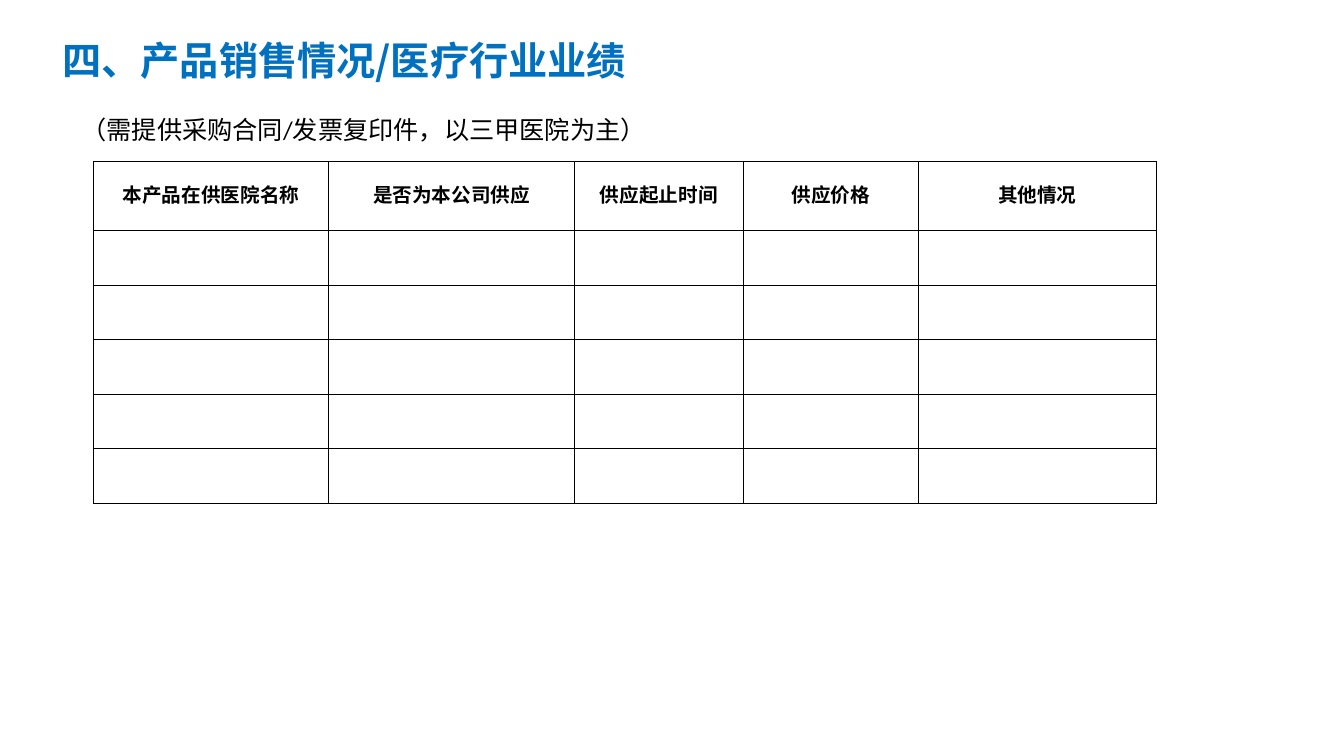
from lxml.etree import SubElement
from pptx import Presentation
from pptx.dml.color import RGBColor
from pptx.enum.text import MSO_ANCHOR, PP_ALIGN
from pptx.oxml.ns import qn
from pptx.util import Inches, Pt

COLORS = {"title": "0070C0", "text": "000000", "border": "000000"}
CJK_FONT = "Noto Sans CJK SC"


def add_run(paragraph, text, size, color, latin=CJK_FONT, bold=False):
    run = paragraph.add_run()
    run.text = text
    run.font.size = Pt(size)
    run.font.bold = bold
    run.font.name = latin
    run.font.color.rgb = RGBColor.from_string(COLORS[color])
    SubElement(run.font._element, qn("a:ea"), typeface=CJK_FONT)


def add_borders(cell):
    properties = cell._tc.get_or_add_tcPr()
    for side in ("lnL", "lnR", "lnT", "lnB"):
        line = SubElement(properties, qn(f"a:{side}"), w=str(Pt(0.5)))
        fill = SubElement(line, qn("a:solidFill"))
        SubElement(fill, qn("a:srgbClr"), val=COLORS["border"])


prs = Presentation()
prs.slide_width = Inches(13.33)
prs.slide_height = Inches(7.5)
slide = prs.slides.add_slide(prs.slide_layouts[5])

title = slide.shapes.title
title.left, title.top = Inches(0.52), Inches(0.31)
title.width, title.height = Inches(6.67), Inches(0.57)
title.text_frame.vertical_anchor = MSO_ANCHOR.TOP
heading = title.text_frame.paragraphs[0]
heading.alignment = PP_ALIGN.LEFT
add_run(heading, "四、产品销售情况/医疗行业业绩", 28, "title", bold=True)

requirement = slide.shapes.add_textbox(
    Inches(0.71), Inches(0.93), Inches(12.3), Inches(0.62))
requirement.text_frame.word_wrap = True
requirement_line = requirement.text_frame.paragraphs[0]
requirement_line.line_spacing = 1.5
add_run(requirement_line, "（需提供采购合同/发票复印件，以三甲医院为主）", 18, "text",
        latin="Calibri")

columns = [
    ("本产品在供医院名称", 2.33),
    ("是否为本公司供应", 2.44),
    ("供应起止时间", 1.67),
    ("供应价格", 1.74),
    ("其他情况", 2.36),
]
row_heights = [0.69] + [0.54] * 5
sales = slide.shapes.add_table(
    len(row_heights), len(columns),
    Inches(0.93), Inches(1.6), Inches(10.55), Inches(3.38)).table
sales.horz_banding = False

for row, height in zip(sales.rows, row_heights):
    row.height = Inches(height)
for cell in sales.iter_cells():
    add_borders(cell)
    cell.fill.background()

for index, (label, width) in enumerate(columns):
    sales.columns[index].width = Inches(width)
    header = sales.cell(0, index)
    header.vertical_anchor = MSO_ANCHOR.MIDDLE
    header.margin_left = header.margin_top = header.margin_right = Inches(0.01)
    header.margin_bottom = Inches(0.05)
    header_line = header.text_frame.paragraphs[0]
    header_line.alignment = PP_ALIGN.CENTER
    add_run(header_line, label, 14, "text", bold=True)

prs.save("out.pptx")
